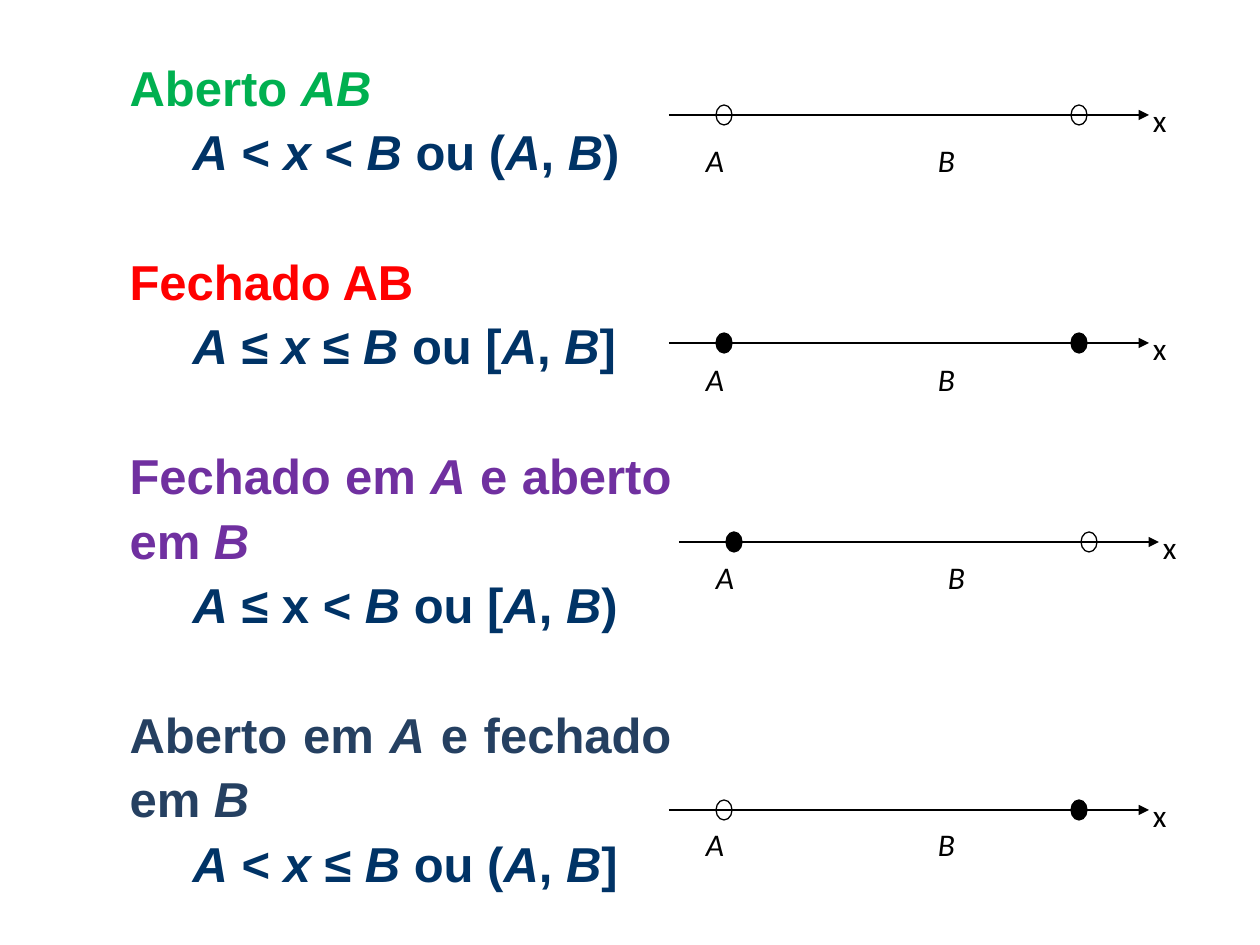
"""Build a slide of the four bounded interval types with their number lines."""
from dataclasses import dataclass

from lxml.etree import SubElement
from pptx import Presentation
from pptx.dml.color import RGBColor
from pptx.enum.shapes import MSO_CONNECTOR, MSO_SHAPE
from pptx.enum.text import MSO_ANCHOR, MSO_AUTO_SIZE, PP_ALIGN
from pptx.oxml.ns import qn
from pptx.util import Emu, Pt

PX_PER_INCH = 126


@dataclass(frozen=True)
class Theme:
    """Colours, fonts and type sizes of the slide."""
    ink: RGBColor = RGBColor(0x00, 0x00, 0x00)
    formula: RGBColor = RGBColor(0x00, 0x33, 0x66)
    text_font: str = "Arial"
    label_font: str = "Calibri"
    text_size: Pt = Pt(28)
    label_size: Pt = Pt(18)
    line_width: Pt = Pt(0.75)
    line_spacing: float = 1.1
    section_gap: Pt = Pt(37)


@dataclass(frozen=True)
class Interval:
    """One interval type; asterisks in its wording enclose italics."""
    heading: str
    formula: str
    color: str
    axis_left: int
    axis_y: int
    label_top: int
    closed_a: bool
    closed_b: bool


THEME = Theme()
INTERVALS = [
    Interval("Aberto *AB*", "*A* < *x* < *B* ou (*A*, *B*)",
             "00B050", 669, 115, 135, False, False),
    Interval("Fechado AB", "*A* ≤ *x* ≤ *B* ou [*A*, *B*]",
             "FF0000", 669, 343, 354, True, True),
    Interval("Fechado em *A* e aberto em *B*", "*A* ≤ x < *B* ou [*A*, *B*)",
             "7030A0", 679, 542, 552, True, False),
    Interval("Aberto em *A* e fechado em *B*", "*A* < *x* ≤ *B* ou (*A*, *B*]",
             "254061", 669, 810, 819, False, True),
]


def px(length: int) -> Emu:
    """Turn pixels into EMU."""
    return Emu(round(length * 914400 / PX_PER_INCH))


def write_paragraph(paragraph, text: str, level: int, color: RGBColor, space_before: Pt) -> None:
    """Write one justified, unbulleted line of the list."""
    paragraph.level = level
    paragraph.alignment = PP_ALIGN.JUSTIFY
    paragraph.line_spacing = THEME.line_spacing
    paragraph.space_before = space_before
    paragraph.space_after = Pt(0)
    properties = paragraph._p.get_or_add_pPr()
    properties.set("marL", str(px(63 * (level + 1))))
    properties.set("indent", "0")
    SubElement(properties, qn("a:buNone"))
    font = paragraph.font
    font.name, font.size, font.bold = THEME.text_font, THEME.text_size, True
    font.color.rgb = color
    for index, part in enumerate(text.split("*")):
        if part:
            run = paragraph.add_run()
            run.text = part
            run.font.italic = index % 2 == 1


def write_list(body, intervals: list[Interval]) -> None:
    """Fill the body placeholder with headings and formulas."""
    body.left, body.top, body.width, body.height = px(54), px(45), px(630), px(857)
    frame = body.text_frame
    frame.word_wrap = True
    frame.auto_size = MSO_AUTO_SIZE.NONE
    frame.vertical_anchor = MSO_ANCHOR.TOP
    for index, interval in enumerate(intervals):
        heading = frame.add_paragraph() if index else frame.paragraphs[0]
        gap = THEME.section_gap if index else Pt(0)
        write_paragraph(heading, interval.heading, 0, RGBColor.from_string(interval.color), gap)
        write_paragraph(frame.add_paragraph(), interval.formula, 1, THEME.formula, Pt(0))


def add_label(slide, text: str, left: int, top: int, italic: bool) -> None:
    """Add a single-letter label."""
    shape = slide.shapes.add_textbox(px(left), px(top), px(24), px(50))
    frame = shape.text_frame
    frame.word_wrap = True
    frame.margin_left = frame.margin_right = 0
    paragraph = frame.paragraphs[0]
    paragraph.text = text
    font = paragraph.font
    font.name, font.size, font.italic = THEME.label_font, THEME.label_size, italic
    font.color.rgb = THEME.ink


def add_endpoint(slide, center_x: int, center_y: int, closed: bool) -> None:
    """Add an endpoint, filled when it belongs to the interval."""
    shape = slide.shapes.add_shape(
        MSO_SHAPE.OVAL, px(center_x - 8), px(center_y - 10), px(16), px(20))
    shape.shadow.inherit = False
    shape.line.color.rgb = THEME.ink
    shape.line.width = THEME.line_width
    if closed:
        shape.fill.solid()
        shape.fill.fore_color.rgb = THEME.ink
    else:
        shape.fill.background()


def add_axis(slide, left: int, y: int) -> None:
    """Add an arrow pointing right."""
    axis = slide.shapes.add_connector(
        MSO_CONNECTOR.STRAIGHT, px(left), px(y), px(left + 480), px(y))
    axis.line.color.rgb = THEME.ink
    axis.line.width = THEME.line_width
    SubElement(axis.line._get_or_add_ln(), qn("a:tailEnd"), type="triangle")
    SubElement(axis._element.spPr, qn("a:effectLst"))


def add_number_line(slide, interval: Interval) -> None:
    """Draw the number line of an interval."""
    left, y = interval.axis_left, interval.axis_y
    add_axis(slide, left, y)
    add_endpoint(slide, left + 55, y, interval.closed_a)
    add_endpoint(slide, left + 410, y, interval.closed_b)
    add_label(slide, "x", left + 484, y - 20, False)
    add_label(slide, "A", left + 37, interval.label_top, True)
    add_label(slide, "B", left + 269, interval.label_top, True)


def main() -> None:
    """Build and save the presentation."""
    presentation = Presentation()
    presentation.slide_width, presentation.slide_height = px(1260), px(945)
    slide = presentation.slides.add_slide(presentation.slide_layouts[1])
    title = slide.shapes.title._element
    title.getparent().remove(title)
    write_list(slide.placeholders[1], INTERVALS)
    for interval in INTERVALS:
        add_number_line(slide, interval)
    presentation.save("out.pptx")


if __name__ == "__main__":
    main()
